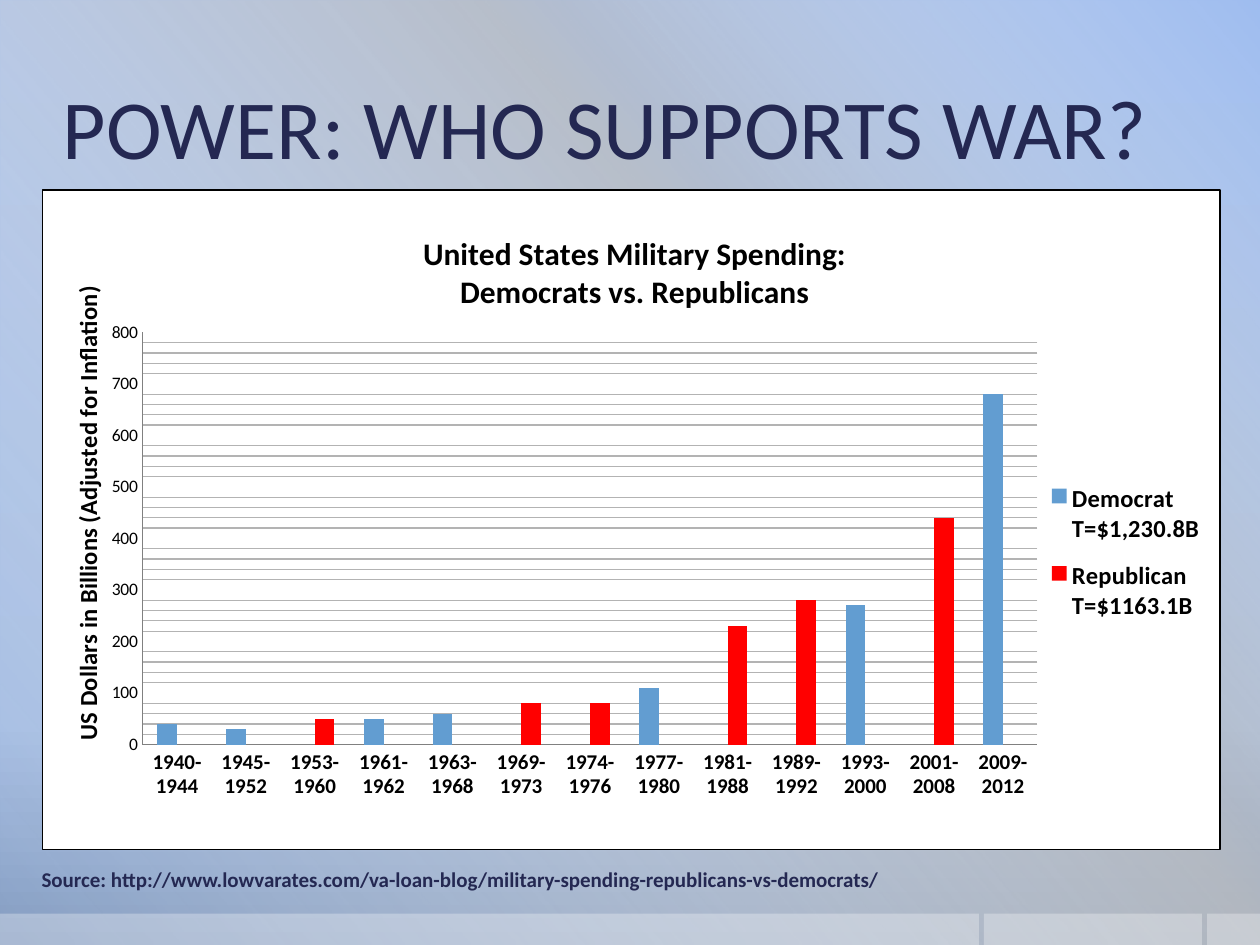
from lxml import etree
from pptx import Presentation
from pptx import util as u
from pptx.chart import data
from pptx.dml import color
from pptx.enum import chart as charts, shapes, text
from pptx.oxml import ns, parse_xml

PX = 9144  # 100 px to the inch
NAVY, BLACK, WHITE, GRID, AXIS = "242852", "000000", "FFFFFF", "B3B3B3", "808080"
FONT = "Calibri"

PERIODS = ["1940-1944", "1945-1952", "1953-1960", "1961-1962", "1963-1968",
           "1969-1973", "1974-1976", "1977-1980", "1981-1988", "1989-1992",
           "1993-2000", "2001-2008", "2009-2012"]
PARTIES = [
    ("Democrat\nT=$1,230.8B", "629DD1",
     [40, 30, None, 50, 60, None, None, 110, None, None, 270, None, 680]),
    ("Republican\nT=$1163.1B", "FF0000",
     [None, None, 50, None, None, 80, 80, None, 230, 280, None, 440, None]),
]


def emu(box):
    return [u.Emu(length * PX) for length in box]


def rgb(value):
    return color.RGBColor.from_string(value)


def style_font(font, size, bold=False, fill=BLACK):
    font.name, font.size, font.bold = FONT, u.Pt(size), bold
    font.color.rgb = rgb(fill)


def set_alpha(solid, percent):
    etree.SubElement(solid[0], ns.qn("a:alpha"), val=str(percent * 1000))


def set_gradient(owner, angle, stops):
    """Swap the solid fill inside owner for a gradient of (place, colour, opacity)."""
    marks = "".join(
        f'<a:gs pos="{place * 1000}"><a:srgbClr val="{value}">'
        f'<a:alpha val="{opacity * 1000}"/></a:srgbClr></a:gs>'
        for place, value, opacity in stops)
    solid = owner.find(".//" + ns.qn("a:solidFill"))
    solid.getparent().replace(solid, parse_xml(
        f'<a:gradFill {ns.nsdecls("a")} rotWithShape="1"><a:gsLst>{marks}</a:gsLst>'
        f'<a:lin ang="{angle * 60000}" scaled="0"/></a:gradFill>'))


def chart_format(line, width, fill=None):
    """Format element for chart parts that have no public format object."""
    def solid(value):
        return f'<a:solidFill><a:srgbClr val="{value}"/></a:solidFill>'
    inside = solid(fill) if fill else ""
    return parse_xml(f'<c:spPr {ns.nsdecls("c", "a")}>{inside}'
                     f'<a:ln w="{u.Pt(width)}">{solid(line)}</a:ln></c:spPr>')


def set_layout(parent, index, inner=False, **parts):
    """Give a chart part a manual layout in fractions of the chart."""
    for old in parent.findall(ns.qn("c:layout")):
        parent.remove(old)
    rules = '<c:layoutTarget val="inner"/>' if inner else ""
    rules += '<c:xMode val="edge"/><c:yMode val="edge"/>'
    rules += "".join(f'<c:{key} val="{value}"/>' for key, value in parts.items())
    parent.insert(index, parse_xml(
        f'<c:layout {ns.nsdecls("c")}><c:manualLayout>{rules}</c:manualLayout></c:layout>'))


def add_panel(page, box):
    panel = page.shapes.add_shape(shapes.MSO_SHAPE.RECTANGLE, *emu(box))
    panel.shadow.inherit = False
    panel.line.fill.background()
    panel.fill.solid()
    panel.fill.fore_color.rgb = rgb(WHITE)
    return panel


def add_backdrop(page, box):
    left, top, width, height = box
    page.background.fill.solid()
    page.background.fill.fore_color.rgb = rgb(WHITE)
    set_gradient(page._element, 90, [(0, "9EBCEF", 100), (76, "A0BAE2", 100),
                                     (100, "839BC0", 100)])
    sheen = add_panel(page, box)
    set_gradient(sheen._element.spPr, 140, [(0, WHITE, 0), (34, "BFBFBF", 61),
                                            (38, "BFBFBF", 76), (100, WHITE, 0)])
    # Footer strip, split by two narrow gaps
    strip = 25
    for start, end in [(0, 777), (781, 954), (958, width)]:
        tile = add_panel(page, (left + start, top + height - strip, end - start, strip))
        set_alpha(tile._element.spPr.find(ns.qn("a:solidFill")), 30)


def add_text(page, box, words, size, bold=False, anchor=text.MSO_ANCHOR.TOP):
    frame = page.shapes.add_textbox(*emu(box)).text_frame
    frame.word_wrap = True
    frame.vertical_anchor = anchor
    frame.margin_left = frame.margin_right = 0
    span = frame.paragraphs[0].add_run()
    span.text = words
    style_font(span.font, size, bold, NAVY)


def write_title(owner, words, size, **place):
    frame = owner.text_frame
    frame.text = words
    for para in frame.paragraphs:
        style_font(para.runs[0].font, size, True)
    set_layout(owner._element, 1, **place)


def style_axes(chart):
    periods, dollars = chart.category_axis, chart.value_axis
    for axis, size, bold in [(periods, 12, True), (dollars, 10, False)]:
        axis.major_tick_mark = axis.minor_tick_mark = charts.XL_TICK_MARK.NONE
        axis.format.line.color.rgb = rgb(AXIS)
        style_font(axis.tick_labels.font, size, bold)
    dollars.minimum_scale, dollars.maximum_scale = 0, 800
    dollars.major_unit, dollars.minor_unit = 100, 20
    dollars.has_major_gridlines = False
    dollars.has_minor_gridlines = True
    grid = dollars._element.find(ns.qn("c:minorGridlines"))
    grid.append(chart_format(GRID, 0.75))
    write_title(dollars.axis_title, "US Dollars in Billions (Adjusted for Inflation)",
                14, x=0.02, y=0.14)
    body = dollars.axis_title.text_frame._txBody.bodyPr
    body.set("rot", "-5400000")
    body.set("vert", "horz")


def add_spending_chart(page, box):
    figures = data.CategoryChartData()
    figures.categories = PERIODS
    for name, _, values in PARTIES:
        figures.add_series(name, values)
    chart = page.shapes.add_chart(
        charts.XL_CHART_TYPE.COLUMN_CLUSTERED, *emu(box), figures).chart
    style_font(chart.font, 10)
    space = chart._chartSpace

    # White card with a thin black edge
    space.find(ns.qn("c:chart")).addnext(chart_format(BLACK, 1.1, fill=WHITE))

    # Columns
    plot = chart.plots[0]
    plot.gap_width, plot.overlap, plot.vary_by_categories = 150, 0, False
    for series, (_, fill, _) in zip(plot.series, PARTIES):
        series.format.fill.solid()
        series.format.fill.fore_color.rgb = rgb(fill)
        series.invert_if_negative = False
    set_layout(space.find(".//" + ns.qn("c:plotArea")), 0, inner=True,
               x=0.085, y=0.216, w=0.76, h=0.625)

    # Title, axes and legend
    chart.has_title = True
    write_title(chart.chart_title, "United States Military Spending:\nDemocrats vs. Republicans",
                18, x=0.32, y=0.06)
    style_axes(chart)
    chart.has_legend = True
    chart.legend.position = charts.XL_LEGEND_POSITION.RIGHT
    chart.legend.include_in_layout = False
    style_font(chart.legend.font, 14, True)
    set_layout(chart.legend._element, 1, x=0.845, y=0.42, w=0.15, h=0.26)


def main():
    deck = Presentation()
    deck.slide_width, deck.slide_height = emu((1000, 750))
    page = deck.slides.add_slide(deck.slide_layouts[6])
    add_backdrop(page, (0, 0, 1000, 750))
    add_text(page, (50, 50, 900, 100), "POWER: WHO SUPPORTS WAR?", 48,
             anchor=text.MSO_ANCHOR.MIDDLE)
    add_text(page, (33, 683, 917, 42),
             "Source: http://www.lowvarates.com/va-loan-blog/military-spending-republicans-vs-democrats/",
             12, bold=True)
    add_spending_chart(page, (33, 150, 936, 525))
    deck.save("out.pptx")


if __name__ == "__main__":
    main()
